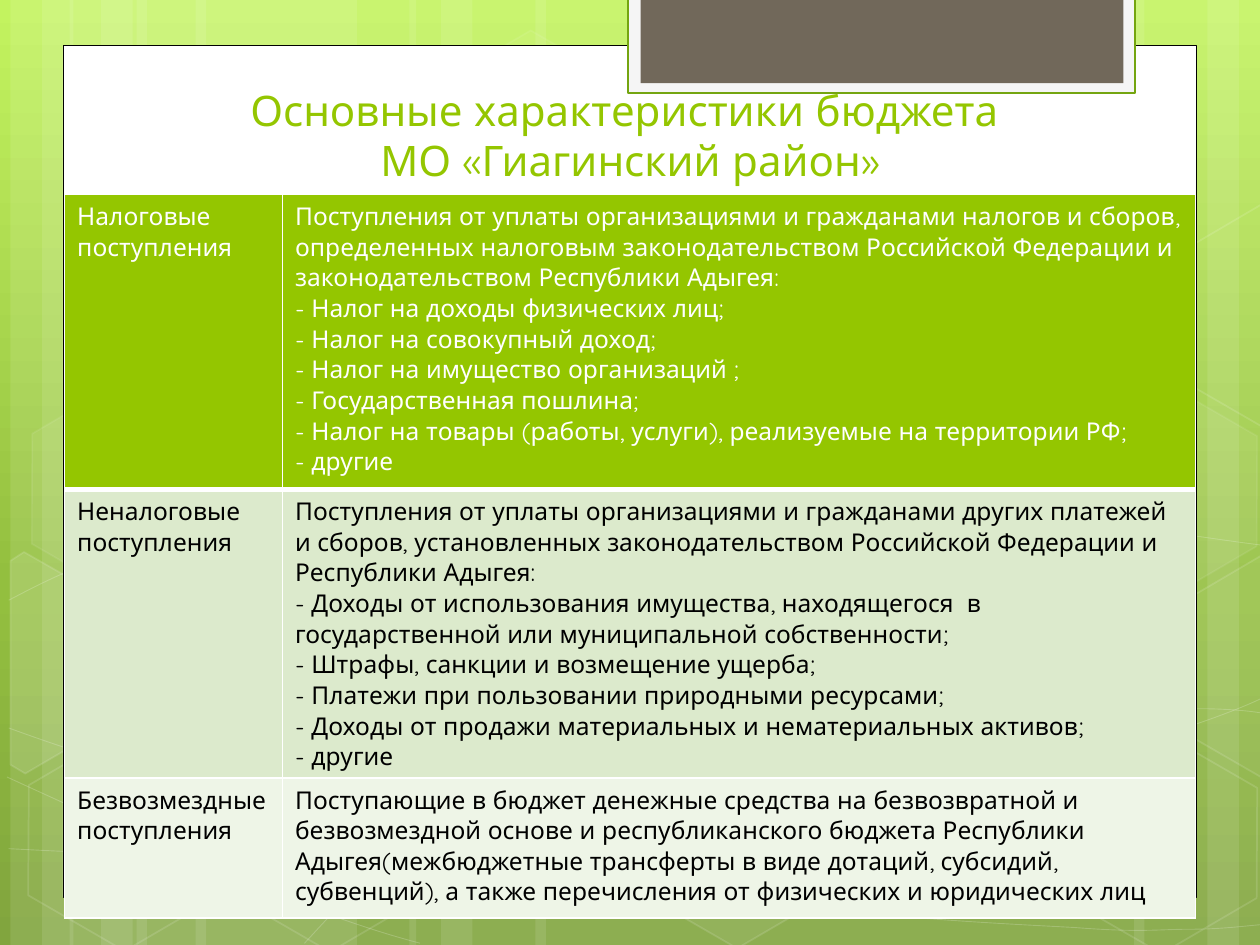
import copy
import math

import pptx
import pptx.dml.color
import pptx.enum.shapes
import pptx.enum.text
import pptx.oxml
import pptx.oxml.ns
import pptx.util

Pt = pptx.util.Pt
RGBColor = pptx.dml.color.RGBColor
MSO_SHAPE = pptx.enum.shapes.MSO_SHAPE
NS = pptx.oxml.ns.nsdecls("a")

WHITE = RGBColor(0xFF, 0xFF, 0xFF)
BLACK = RGBColor(0x00, 0x00, 0x00)
GREEN = RGBColor(0x94, 0xC6, 0x00)
DARK_GREEN = RGBColor(0x74, 0xA5, 0x10)
BAND = RGBColor(0xDC, 0xEA, 0xCC)
PALE_BAND = RGBColor(0xEE, 0xF5, 0xE7)
TAB_EDGE = RGBColor(0xF5, 0xF5, 0xF5)
TAB = RGBColor(0x71, 0x68, 0x5A)
BACKGROUND = [
    (0, RGBColor(0xC3, 0xF3, 0x5F)),
    (0.62, RGBColor(0x93, 0xBF, 0x3F)),
    (1, RGBColor(0x81, 0xA5, 0x3E)),
]

STRIPE_GROUPS = [(6, 72, 126), (39.8, 72, 126), (234, 72, 222)]
RIGHT_STRIPES = [(528, 126), (690, 36), (648, 60)]

CURVES = [
    [(5, 485), (44, 487), (83, 489), (137, 488), (191, 487), (258, 486), (330, 479),
     (402, 472), (504, 458), (570, 444), (636, 431), (703, 409), (725, 397)],
    [(5, 343), (26, 332), (47, 321), (87, 310), (128, 300), (186, 284), (250, 279),
     (314, 274), (392, 273), (471, 279), (550, 285), (682, 307), (725, 312)],
    [(4, 444), (91, 484), (178, 523), (240, 539)],
    [(5, 416), (27, 424), (50, 432), (92, 444), (134, 454), (197, 472), (257, 485),
     (317, 497), (392, 510), (452, 517), (512, 525), (576, 528), (614, 530),
     (652, 533), (662, 531), (680, 531), (699, 531), (712, 529), (725, 528)],
    [(174, 539), (187, 525), (200, 510), (217, 498), (235, 485), (259, 471), (279, 460),
     (300, 450), (312, 446), (338, 438), (364, 431), (413, 421), (438, 416),
     (464, 411), (467, 411), (490, 410), (512, 408), (547, 405), (572, 405),
     (597, 404), (638, 405), (638, 405), (654, 405), (670, 405), (686, 405),
     (699, 405), (711, 406), (718, 407), (724, 408), (722, 407), (724, 408)],
]

HEXAGONS = [
    (240.5, 26, 4, 8), (358, 424, 6, 12), (8, 425.5, None, 12), (10, 224.6, 7, 8),
    (125.3, 426, None, 12), (542, 326, 10, 12), (600.5, 427, None, 12), (600.5, 226, 7, 8),
]
LEFT_CUT = [(6, 320.4), (13.7, 315.4), (69, 347), (68.4, 410.4), (14.4, 442), (6, 437)]
RIGHT_CUT = [(666.7, 349.2), (720.7, 317.5), (726.5, 321), (726.5, 441.4),
             (721.4, 444.2), (666.7, 412.6)]

TITLE = "Основные характеристики бюджета \vМО «Гиагинский район»"
ROWS = [
    (168.5, GREEN, WHITE, "Налоговые поступления", [
        "Поступления от уплаты организациями и гражданами налогов и сборов, определенных "
        "налоговым законодательством Российской Федерации и законодательством Республики Адыгея:",
        "- Налог на доходы физических лиц;",
        "- Налог на совокупный доход;",
        "- Налог на имущество организаций ;",
        "- Государственная пошлина;",
        "- Налог на товары (работы, услуги), реализуемые на территории РФ;",
        "- другие",
    ]),
    (157, BAND, BLACK, "Неналоговые поступления", [
        "Поступления от уплаты организациями и гражданами других платежей и сборов, "
        "установленных законодательством Российской Федерации и Республики Адыгея:",
        "- Доходы от использования имущества, находящегося  в государственной или "
        "муниципальной собственности;",
        "- Штрафы, санкции и возмещение ущерба;",
        "- Платежи при пользовании природными ресурсами;",
        "- Доходы от продажи материальных и нематериальных активов;",
        "- другие",
    ]),
    (80, PALE_BAND, BLACK, "Безвозмездные поступления", [
        "Поступающие в бюджет денежные средства на безвозвратной и безвозмездной основе и "
        "республиканского бюджета Республики Адыгея(межбюджетные трансферты в виде дотаций, "
        "субсидий, субвенций), а также перечисления от физических и юридических лиц",
    ]),
]


class Deck:
    font = "Quicksand"
    tilt = 30

    def __init__(self, prs):
        self.s = prs.slides.add_slide(prs.slide_layouts[5])

    def background(self, stops):
        fill = self.s.background.fill
        fill.gradient()
        fill.gradient_angle = 270
        stop_list = self.s.element.xpath(".//p:bg//a:gsLst")[0]
        stop_list.append(copy.deepcopy(stop_list[0]))
        for stop, (position, color) in zip(fill.gradient_stops, stops):
            stop.position = position
            stop.color.rgb = color

    def alpha(self, sp, query, percent):
        color = sp.element.spPr.xpath(query + "/a:srgbClr")[0]
        color.append(pptx.oxml.parse_xml(f'<a:alpha {NS} val="{percent * 1000}"/>'))

    def style(self, sp, fill=None, line=None, width=1, fill_alpha=100, line_alpha=100):
        sp.shadow.inherit = False
        if fill is None:
            sp.fill.background()
        else:
            sp.fill.solid()
            sp.fill.fore_color.rgb = fill
            if fill_alpha < 100:
                self.alpha(sp, "./a:solidFill", fill_alpha)
        if line is None:
            sp.line.fill.background()
        else:
            sp.line.color.rgb = line
            sp.line.width = Pt(width)
            if line_alpha < 100:
                self.alpha(sp, "./a:ln/a:solidFill", line_alpha)

    def rect(self, x, y, w, h, **style):
        sp = self.s.shapes.add_shape(MSO_SHAPE.RECTANGLE, Pt(x), Pt(y), Pt(w), Pt(h))
        self.style(sp, **style)

    def stripe(self, x, w):
        self.rect(x, 0, w, 540, fill=WHITE, fill_alpha=10)

    def hexagon(self, x, y, fill_alpha, line_alpha):
        sp = self.s.shapes.add_shape(MSO_SHAPE.HEXAGON, Pt(x), Pt(y), Pt(126), Pt(109.4))
        sp.rotation = self.tilt
        sp.adjustments[0] = 0.285
        self.style(sp, WHITE if fill_alpha else None, WHITE, 1, fill_alpha or 100, line_alpha)

    def outline(self, points, close):
        points = [(Pt(x), Pt(y)) for x, y in points]
        builder = self.s.shapes.build_freeform(*points[0])
        builder.add_line_segments(points[1:], close=close)
        return builder.convert_to_shape()

    def curve(self, points):
        sp = self.outline(points, False)
        lines = sp.element.xpath(".//a:lnTo")
        for i in range(0, len(lines), 3):
            bend = pptx.oxml.parse_xml(f"<a:cubicBezTo {NS}/>")
            lines[i].addprevious(bend)
            for line in lines[i:i + 3]:
                bend.append(line[0])
                line.getparent().remove(line)
        self.style(sp, line=WHITE, width=0.5, line_alpha=20)

    def cut_hexagon(self, points, cx, cy, **style):
        cos, sin = math.cos(math.radians(self.tilt)), math.sin(math.radians(self.tilt))
        level = [(cx + (x - cx) * cos + (y - cy) * sin, cy + (y - cy) * cos - (x - cx) * sin)
                 for x, y in points]
        sp = self.outline(level, True)
        sp.rotation = self.tilt
        self.style(sp, line=WHITE, line_alpha=12, **style)

    def title(self, text, x, y, w, h):
        sp = self.s.shapes.title
        sp.left, sp.top, sp.width, sp.height = Pt(x), Pt(y), Pt(w), Pt(h)
        self.s.shapes.element.append(sp.element)
        tf = sp.text_frame
        tf.auto_size = pptx.enum.text.MSO_AUTO_SIZE.NONE
        tf.vertical_anchor = pptx.enum.text.MSO_ANCHOR.BOTTOM
        tf.text = text
        p = tf.paragraphs[0]
        p.alignment = pptx.enum.text.PP_ALIGN.CENTER
        self.text_font(p, 24, GREEN)

    def text_font(self, p, size, color):
        p.font.name = self.font
        p.font.size = Pt(size)
        p.font.bold = False
        p.font.color.rgb = color

    def table(self, rows, x, y, widths):
        height = sum(row[0] for row in rows)
        table = self.s.shapes.add_table(
            len(rows), len(widths), Pt(x), Pt(y), Pt(sum(widths)), Pt(height)).table
        for column, width in zip(table.columns, widths):
            column.width = Pt(width)
        for row, (height, fill, color, name, lines) in zip(table.rows, rows):
            row.height = Pt(height)
            for cell, text in zip(row.cells, (name, "\n".join(lines))):
                cell.fill.solid()
                cell.fill.fore_color.rgb = fill
                cell.text = text
                for p in cell.text_frame.paragraphs:
                    self.text_font(p, 14, color)
        for cell in table.rows[0].cells:
            cell.fill.solid()
            props = cell._tc.get_or_add_tcPr()
            for i, (side, width) in enumerate((("L", 1), ("R", 1), ("T", 1), ("B", 3))):
                props.insert(i, pptx.oxml.parse_xml(
                    f'<a:ln{side} {NS} w="{Pt(width)}"><a:solidFill>'
                    f'<a:srgbClr val="{WHITE}"/></a:solidFill></a:ln{side}>'))


def main():
    prs = pptx.Presentation()
    prs.slide_width, prs.slide_height = Pt(720), Pt(540)
    deck = Deck(prs)
    deck.background(BACKGROUND)
    for x, offset, width in STRIPE_GROUPS:
        for stripe in ((x + offset, width), (x, 36), (x + 18, 60)):
            deck.stripe(*stripe)
    for stripe in RIGHT_STRIPES:
        deck.stripe(*stripe)
    for curve in CURVES:
        deck.curve(curve)
    for hexagon in HEXAGONS:
        deck.hexagon(*hexagon)
    deck.cut_hexagon(LEFT_CUT, 25.9, 385.2, fill=WHITE, fill_alpha=10)
    deck.cut_hexagon(RIGHT_CUT, 709.2, 374.4, fill=WHITE, fill_alpha=4)
    deck.cut_hexagon([(x, y - 200.6) for x, y in RIGHT_CUT], 709.2, 173.8)
    deck.rect(36, 25.9, 648, 486.7, fill=WHITE, line=BLACK, width=0.5)
    deck.rect(359, -1.5, 289.6, 54.8, fill=TAB_EDGE, line=DARK_GREEN, width=1.25)
    deck.rect(366, -1.5, 276, 49, fill=TAB)
    deck.title(TITLE, 54, 9.4, 612, 100)
    deck.table(ROWS, 36.9, 111.3, [124.5, 521.8])
    prs.save("out.pptx")


if __name__ == "__main__":
    main()
